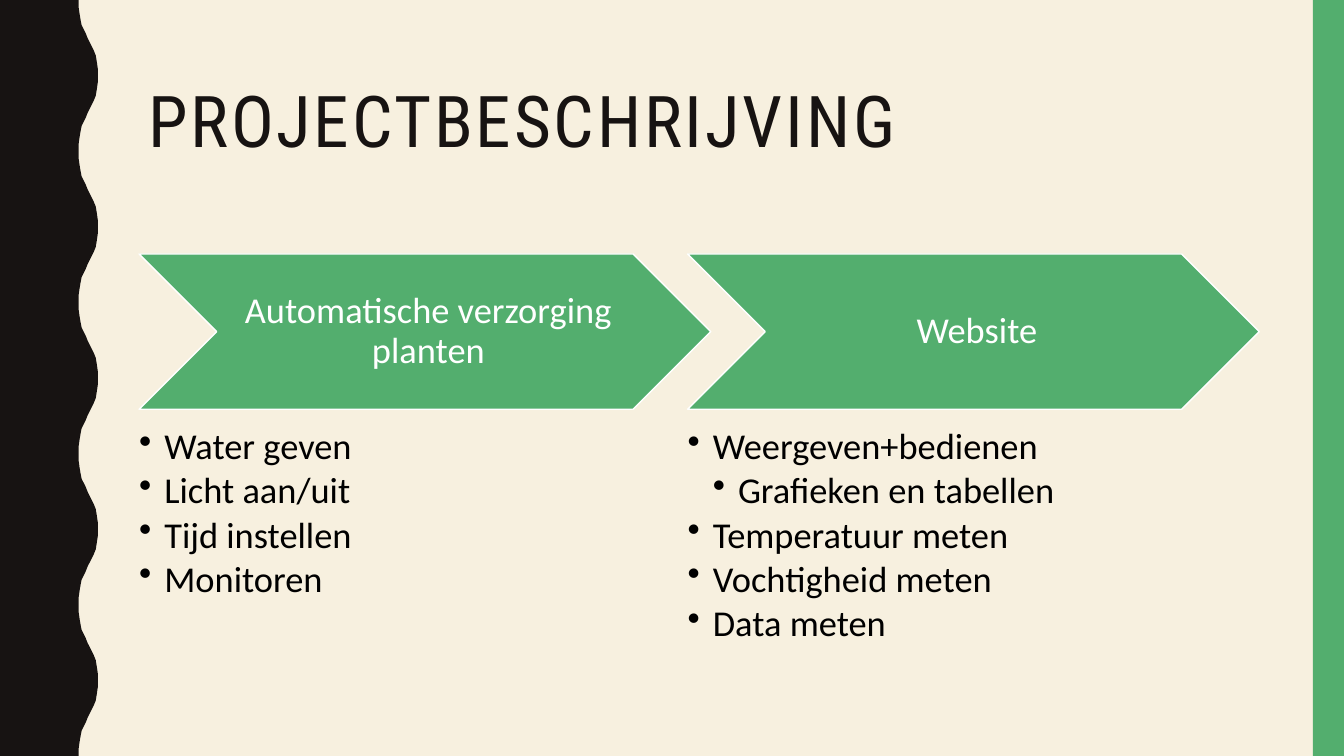
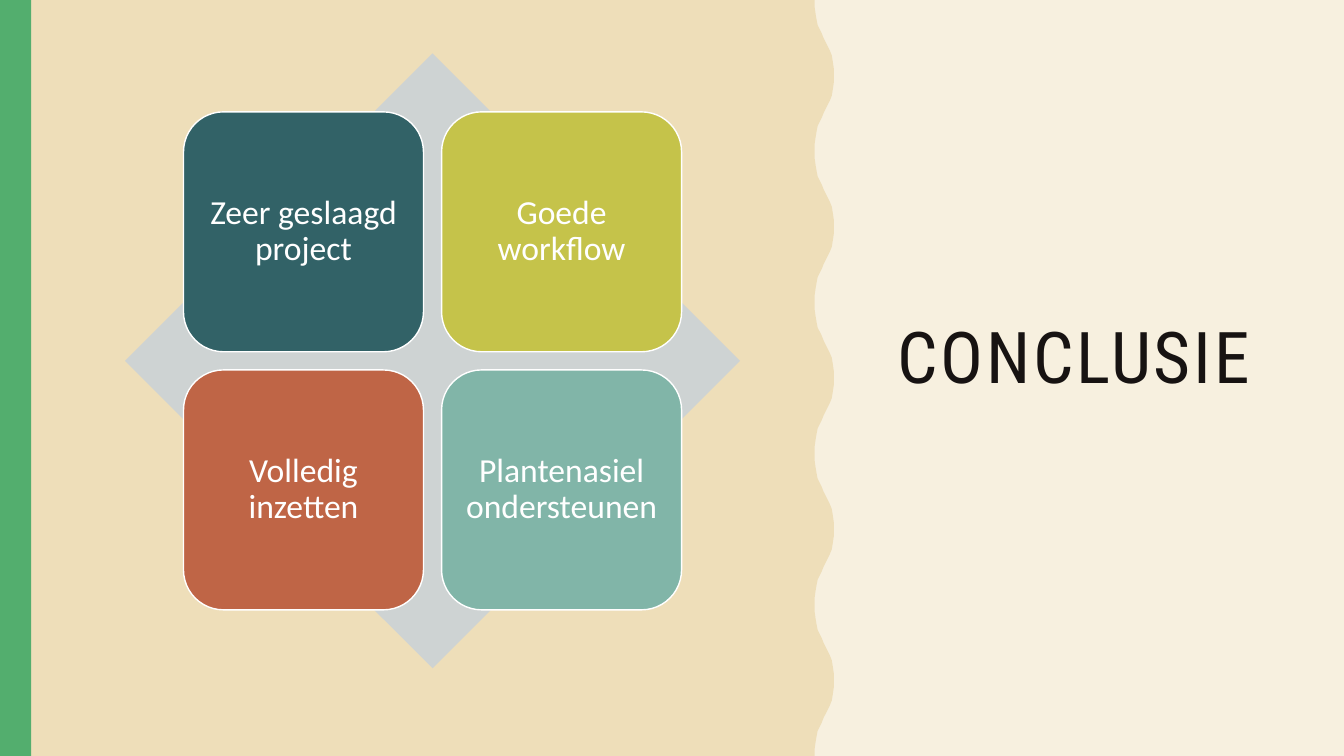
from lxml import etree
from pptx import Presentation
from pptx.dml.color import RGBColor
from pptx.enum import shapes, text
from pptx.oxml.ns import qn
from pptx.util import Inches, Pt

WIDTH, HEIGHT = 13.33, 7.5
BAND = 0.31
CREAM, SAND, INK, GREEN = "F7F0DF", "EEDEB9", "171312", "53AE6E"
WHITE, BLACK, GREY = "FFFFFF", "000000", "CED3D3"
BODY_FONT, TITLE_FONT = "Calibri", "Roboto Condensed"

STEPS = [
    ("Automatische verzorging planten",
     [("Water geven", 0), ("Licht aan/uit", 0), ("Tijd instellen", 0), ("Monitoren", 0)]),
    ("Website",
     [("Weergeven+bedienen", 0), ("Grafieken en tabellen", 1), ("Temperatuur meten", 0),
      ("Vochtigheid meten", 0), ("Data meten", 0)]),
]
CONCLUSIONS = [
    ("Zeer geslaagd project", "326267"),
    ("Goede workflow", "C5C34A"),
    ("Volledig inzetten", "BF6546"),
    ("Plantenasiel ondersteunen", "81B5A8"),
]
WAVE_HALF = [(0, 0), (0, 7), (1, 14), (2, 20), (3, 25), (5, 29), (7, 33), (9, 38),
             (11, 42), (13, 46), (15, 50), (17, 55), (18, 61), (19, 68), (19, 75)]
WAVE_PERIOD = 150


def rgb(value):
    return RGBColor.from_string(value)


def paint(shape, fill, line=None):
    shape.shadow.inherit = False
    shape.fill.solid()
    shape.fill.fore_color.rgb = rgb(fill)
    if line:
        shape.line.color.rgb = rgb(line)
        shape.line.width = Pt(1)
    else:
        shape.line.fill.background()
    return shape


def add_preset(slide, preset, box, fill, line=None):
    return paint(slide.shapes.add_shape(preset, *map(Inches, box)), fill, line)


def add_band(slide, left):
    add_preset(slide, shapes.MSO_SHAPE.RECTANGLE, (left, 0, BAND, HEIGHT), GREEN)


def add_wave(slide, trough, fill):
    period = WAVE_HALF + [(x, WAVE_PERIOD - y) for x, y in WAVE_HALF[-2:0:-1]]
    edge = [(trough * 100 + x, start + y)
            for start in range(0, round(HEIGHT * 100), WAVE_PERIOD) for x, y in period]
    bottom = HEIGHT * 100
    outline = slide.shapes.build_freeform(0, 0, scale=Inches(0.01))
    outline.add_line_segments(edge + [(trough * 100, bottom), (0, bottom)], close=True)
    paint(outline.convert_to_shape(), fill)


def style(paragraph, size, color, font=BODY_FONT, align=text.PP_ALIGN.LEFT):
    paragraph.alignment = align
    paragraph.line_spacing = 0.9
    paragraph.font.size = Pt(size)
    paragraph.font.name = font
    paragraph.font.color.rgb = rgb(color)


def set_insets(frame, left, top, right, bottom):
    frame.word_wrap = True
    frame.margin_left, frame.margin_top = Inches(left), Inches(top)
    frame.margin_right, frame.margin_bottom = Inches(right), Inches(bottom)


def add_label(shape, label, size, insets):
    frame = shape.text_frame
    set_insets(frame, *insets)
    frame.vertical_anchor = text.MSO_ANCHOR.MIDDLE
    frame.text = label
    style(frame.paragraphs[0], size, WHITE, align=text.PP_ALIGN.CENTER)


def add_title(slide, title, box):
    frame = slide.shapes.add_textbox(*map(Inches, box)).text_frame
    frame.word_wrap = True
    frame.vertical_anchor = text.MSO_ANCHOR.MIDDLE
    frame.text = title
    heading = frame.paragraphs[0]
    style(heading, 51, INK, TITLE_FONT)
    heading.runs[0]._r.get_or_add_rPr().set("spc", "200")


def add_bullets(slide, items, box):
    frame = slide.shapes.add_textbox(*map(Inches, box)).text_frame
    set_insets(frame, 0, 0, 0, 0)
    for index, (item, level) in enumerate(items):
        bullet = frame.paragraphs[0] if index == 0 else frame.add_paragraph()
        bullet.text = item
        bullet.level = level
        bullet.space_after = Pt(3.5)
        properties = bullet._p.get_or_add_pPr()
        properties.set("marL", str(Inches(0.25 * (level + 1))))
        properties.set("indent", str(Inches(-0.25)))
        etree.SubElement(properties, qn("a:buChar")).set("char", "•")
        style(bullet, 26, BLACK)


def build_description(slide):
    add_wave(slide, 0.78, INK)
    add_band(slide, WIDTH - BAND)
    add_title(slide, "PROJECTBESCHRIJVING", (1.37, 0.42, 11.13, 1.63))
    for column, (step, items) in enumerate(STEPS):
        left = 1.38 + column * 5.44
        chevron = add_preset(slide, shapes.MSO_SHAPE.CHEVRON, (left, 2.52, 5.67, 1.54), GREEN, WHITE)
        add_label(chevron, step, 26, (0.11, 0.04, 0.04, 0.04))
        add_bullets(slide, items, (left, 4.25, 4.54, 2.16))


def build_conclusion(slide):
    add_title(slide, "CONCLUSIE", (8.8, 0.53, 4, 6.09))
    add_wave(slide, 8.08, SAND)
    add_band(slide, 0)
    add_preset(slide, shapes.MSO_SHAPE.DIAMOND, (1.24, 0.53, 6.1, 6.1), GREY)
    side, pitch = 2.38, 2.56
    for index, (conclusion, color) in enumerate(CONCLUSIONS):
        row, column = divmod(index, 2)
        box = (1.82 + column * pitch, 1.11 + row * pitch, side, side)
        tile = add_preset(slide, shapes.MSO_SHAPE.ROUNDED_RECTANGLE, box, color, WHITE)
        add_label(tile, conclusion, 24, (0.1, 0.1, 0.1, 0.1))


def main():
    deck = Presentation()
    deck.slide_width, deck.slide_height = Inches(WIDTH), Inches(HEIGHT)
    backdrop = deck.slide_master.background.fill
    backdrop.solid()
    backdrop.fore_color.rgb = rgb(CREAM)
    for build in (build_description, build_conclusion):
        build(deck.slides.add_slide(deck.slide_layouts[6]))
    deck.save("out.pptx")


if __name__ == "__main__":
    main()
